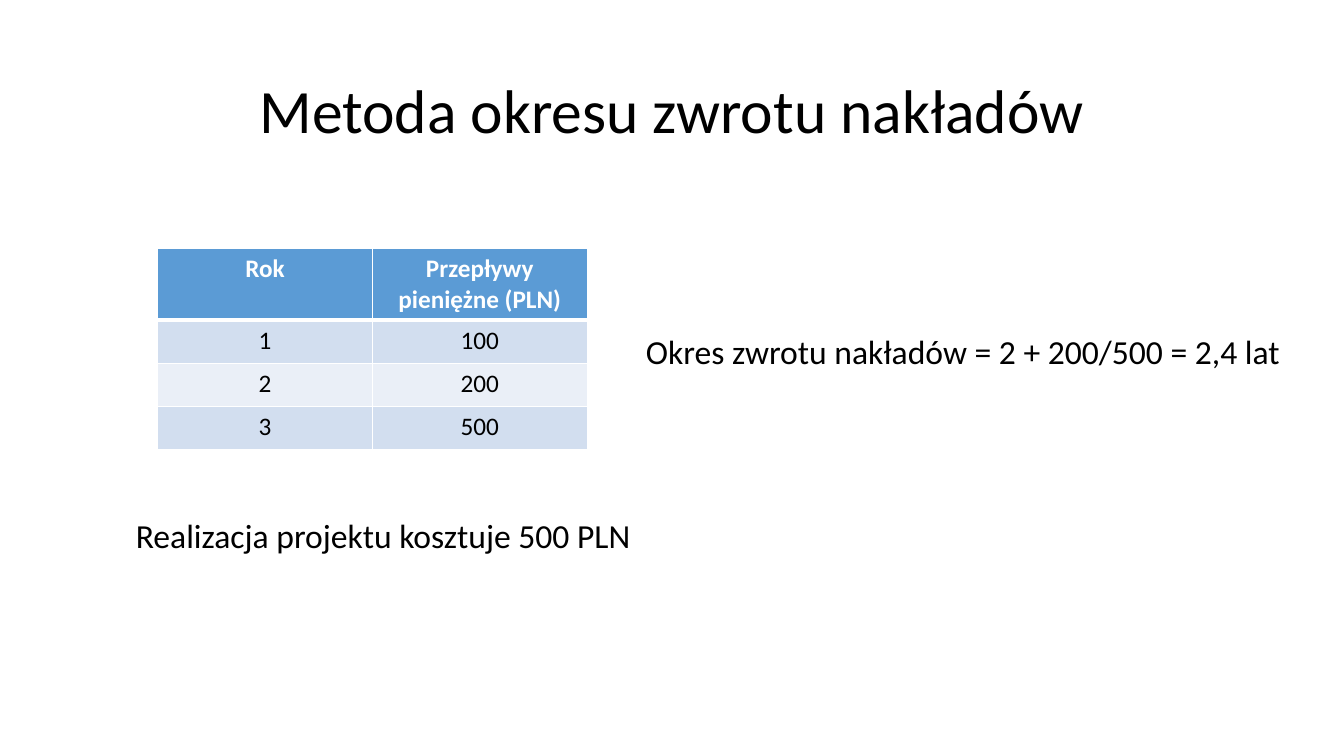
import pptx
import pptx.dml.color
import pptx.enum.text
import pptx.oxml
import pptx.oxml.ns
import pptx.util

Pt = pptx.util.Pt
ALIGN = pptx.enum.text.PP_ALIGN
ANCHOR = pptx.enum.text.MSO_ANCHOR
AUTO_SIZE = pptx.enum.text.MSO_AUTO_SIZE

COLORS = {
    "text": "000000",
    "white": "FFFFFF",
    "header": "5B9BD5",
    "odd": "D2DEEF",
    "even": "EAEFF7",
}


def rgb(name):
    """Return the named colour."""
    return pptx.dml.color.RGBColor.from_string(COLORS[name])


def write(frame, text, size=24, color="text", bold=False, align=ALIGN.LEFT,
          spacing=1.0, font="Calibri"):
    """Put one formatted paragraph into a text frame."""
    frame.word_wrap = True
    paragraph = frame.paragraphs[0]
    paragraph.alignment = align
    paragraph.line_spacing = spacing
    run = paragraph.add_run()
    run.text = text
    run.font.name = font
    run.font.size = Pt(size)
    run.font.bold = bold
    run.font.color.rgb = rgb(color)


class PaybackSlide:
    """Builds the elements of one slide in a shared style."""

    def __init__(self, deck):
        """Add a title-only slide to the deck."""
        self.slide = deck.slides.add_slide(deck.slide_layouts[5])

    def title(self, text, left, top, width, height):
        """Place and format the title."""
        heading = self.slide.shapes.title
        heading.left, heading.top = Pt(left), Pt(top)
        heading.width, heading.height = Pt(width), Pt(height)
        heading.text_frame.vertical_anchor = ANCHOR.MIDDLE
        heading.text_frame.auto_size = AUTO_SIZE.NONE
        write(heading.text_frame, text, size=44, align=ALIGN.CENTER, spacing=0.9)

    def statement(self, text, left, top, width, height=36):
        """Add a line of running text."""
        box = self.slide.shapes.add_textbox(Pt(left), Pt(top), Pt(width), Pt(height))
        write(box.text_frame, text)
        box.text_frame.auto_size = AUTO_SIZE.SHAPE_TO_FIT_TEXT

    def border(self, cell, side, width):
        """Draw one white cell border."""
        line = pptx.oxml.parse_xml(
            f'<a:ln{side} {pptx.oxml.ns.nsdecls("a")} w="{int(Pt(width))}">'
            f'<a:solidFill><a:srgbClr val="{COLORS["white"]}"/></a:solidFill>'
            f'</a:ln{side}>')
        cell._tc.get_or_add_tcPr().append(line)

    def table(self, rows, left, top, width, header_height, row_height):
        """Add a table with a header row and banded values."""
        columns = len(rows[0])
        height = header_height + row_height * (len(rows) - 1)
        table = self.slide.shapes.add_table(
            len(rows), columns, Pt(left), Pt(top), Pt(width), Pt(height)).table
        for column in table.columns:
            column.width = Pt(width / columns)
        for r, values in enumerate(rows):
            is_header = r == 0
            table.rows[r].height = Pt(header_height if is_header else row_height)
            band = "header" if is_header else "odd" if r % 2 else "even"
            widths = {"L": 1, "R": 1, "T": 3 if r == 1 else 1, "B": 3 if is_header else 1}
            for c, value in enumerate(values):
                cell = table.cell(r, c)
                for side, line_width in widths.items():
                    self.border(cell, side, line_width)
                cell.fill.solid()
                cell.fill.fore_color.rgb = rgb(band)
                write(cell.text_frame, value, size=18, bold=is_header,
                      color="white" if is_header else "text", align=ALIGN.CENTER)


def main():
    """Build and save the slide."""
    deck = pptx.Presentation()
    deck.slide_width, deck.slide_height = Pt(960), Pt(540)
    payback = PaybackSlide(deck)
    payback.title("Metoda okresu zwrotu nakładów", 66, 28.75, 828, 104.4)
    payback.statement("Realizacja projektu kosztuje 500 PLN", 90, 364.3, 473)
    cash_flows = [("Rok", "Przepływy pieniężne (PLN)"),
                  ("1", "100"), ("2", "200"), ("3", "500")]
    payback.table(cash_flows, 112.5, 177.5, 307, 51.2, 30.7)
    payback.statement("Okres zwrotu nakładów = 2 + 200/500 = 2,4 lat", 454.3, 233, 471.6)
    deck.save("out.pptx")


if __name__ == "__main__":
    main()
